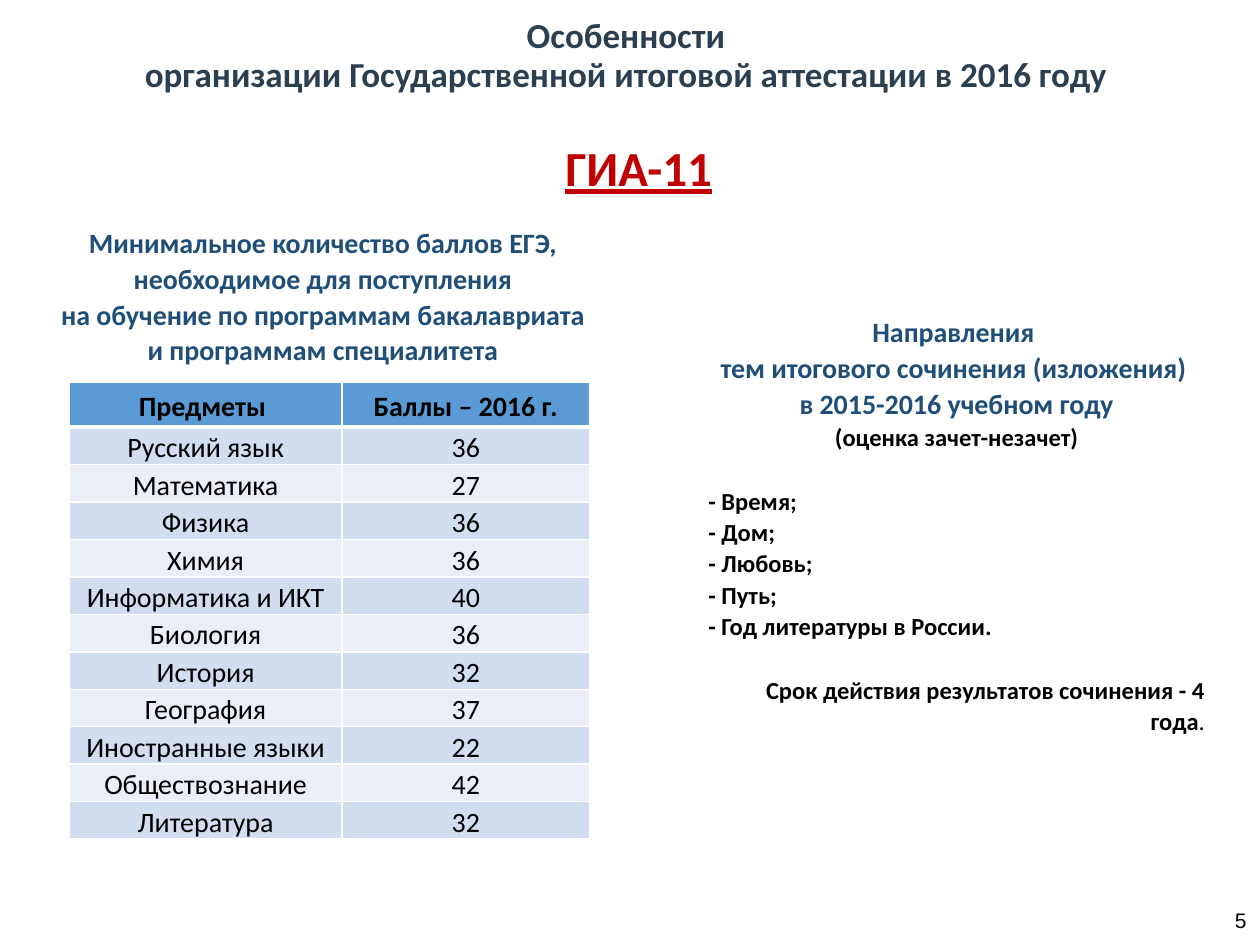
"""Build the slide on the 2016 final state certification."""
from lxml import etree
from pptx import Presentation
from pptx import util as u
from pptx.dml import color
from pptx.enum import text
from pptx.oxml import ns

COLORS = {"title": "2C3F50", "accent": "C00000", "heading": "1F4E79",
          "body": "000000", "header": "5B9BD5", "odd": "D2DEEF",
          "even": "EAEFF7", "border": "FFFFFF"}
AL = text.PP_ALIGN


def add_run(p, words, size, col, name="Calibri", **formats):
    r = p.add_run()
    r.text = words
    r.font.color.rgb = color.RGBColor.from_string(COLORS[col])
    for key, value in {"size": u.Pt(size), "name": name, **formats}.items():
        setattr(r.font, key, value)


def add_border(cell, side, width, index):
    ln = etree.Element(ns.qn(f"a:ln{side}"), w=str(u.Pt(width)))
    fill = etree.SubElement(ln, ns.qn("a:solidFill"))
    etree.SubElement(fill, ns.qn("a:srgbClr"), val=COLORS["border"])
    cell._tc.get_or_add_tcPr().insert(index, ln)


prs = Presentation()
prs.slide_width, prs.slide_height = u.Cm(25.4), u.Cm(19.05)
s = prs.slides.add_slide(prs.slide_layouts[6])

title = {"size": 20, "col": "title", "bold": True}
exam = {"size": 28, "col": "accent", "bold": True, "underline": True}
heading = {"size": 16, "col": "heading", "bold": True}
body = {"size": 14, "col": "body", "bold": True}
number = {"size": 12, "col": "body", "name": "Arial"}
gap = 18.3

boxes = [
    ((0, 0.2, 25.4, 1.88), 0.95, {}, [
        ("Особенности ", title, AL.CENTER, 0),
        ("организации Государственной итоговой аттестации в 2016 году ",
         title, AL.CENTER, 0)]),
    ((0.76, 2.57, 24.23, 1.55), 1.07, {}, [("ГИА-11", exam, AL.CENTER, 0)]),
    ((0.76, 4.37, 11.63, 3.18), 1.07, {}, [
        (line, heading, AL.CENTER, 0) for line in (
            "Минимальное количество баллов ЕГЭ, ",
            "необходимое для поступления ",
            "на обучение по программам бакалавриата ",
            "и программам специалитета ")]),
    ((13.39, 6.17, 11.15, 8.2), 1.07, {"margin_left": u.Cm(0.89)}, [
        ("Направления ", heading, AL.CENTER, 0),
        ("тем итогового сочинения (изложения) ", heading, AL.CENTER, 0),
        ("в 2015-2016 учебном году", heading, AL.CENTER, 0),
        ("(оценка зачет-незачет)", body, AL.CENTER, 0),
        ("- Время;", body, AL.JUSTIFY, gap),
        ("- Дом;", body, AL.JUSTIFY, 0),
        ("- Любовь;", body, AL.JUSTIFY, 0),
        ("- Путь;", body, AL.JUSTIFY, 0),
        ("- Год литературы в России.", body, AL.JUSTIFY, 0),
        ("Срок действия результатов сочинения - 4 года", body, AL.RIGHT, gap)]),
    ((24.36, 18.03, 1.02, 1.02), 1.0,
     {"auto_size": text.MSO_AUTO_SIZE.NONE,
      "vertical_anchor": text.MSO_ANCHOR.MIDDLE},
     [("5", number, AL.RIGHT, 0)]),
]

for place, spacing, frame, lines in boxes:
    tf = s.shapes.add_textbox(*map(u.Cm, place)).text_frame
    formats = {"word_wrap": True,
               "auto_size": text.MSO_AUTO_SIZE.SHAPE_TO_FIT_TEXT, **frame}
    for key, value in formats.items():
        setattr(tf, key, value)
    for i, (words, style, align, before) in enumerate(lines):
        p = tf.add_paragraph() if i else tf.paragraphs[0]
        for key, value in {"alignment": align, "line_spacing": spacing,
                           "space_before": u.Pt(before)}.items():
            setattr(p, key, value)
        add_run(p, words, **style)
        if words.startswith("Срок"):
            add_run(p, ".", **{**style, "bold": False})

scores = [("Предметы ", "Баллы – 2016 г."), ("Русский язык", "36"),
          ("Математика", "27"), ("Физика", "36"), ("Химия", "36"),
          ("Информатика и ИКТ", "40"), ("Биология", "36"), ("История", "32"),
          ("География", "37"), ("Иностранные языки", "22"),
          ("Обществознание", "42"), ("Литература", "32")]
table = s.shapes.add_table(len(scores), 2, u.Cm(1.4), u.Cm(7.7),
                           u.Cm(10.49), u.Cm(9.19)).table
for column, width in zip(table.columns, (5.49, 5)):
    column.width = u.Cm(width)

for i, row in enumerate(scores):
    table.rows[i].height = u.Cm(0.75 if i else 0.91)
    for j, words in enumerate(row):
        cell = table.cell(i, j)
        for key, value in {"margin_left": u.Cm(0.03), "margin_top": u.Cm(0.03),
                           "margin_right": u.Cm(0.03), "margin_bottom": 0,
                           "vertical_anchor": text.MSO_ANCHOR.MIDDLE}.items():
            setattr(cell, key, value)
        cell.fill.solid()
        shade = ("odd" if i % 2 else "even") if i else "header"
        cell.fill.fore_color.rgb = color.RGBColor.from_string(COLORS[shade])
        for index, side in enumerate("LRTB"):
            thick = (i, side) in ((0, "B"), (1, "T"))
            add_border(cell, side, 3 if thick else 1, index)
        p = cell.text_frame.paragraphs[0]
        p.alignment, p.line_spacing = AL.CENTER, 1.07
        add_run(p, words, 16, "body", bold=i == 0)

prs.save("out.pptx")
